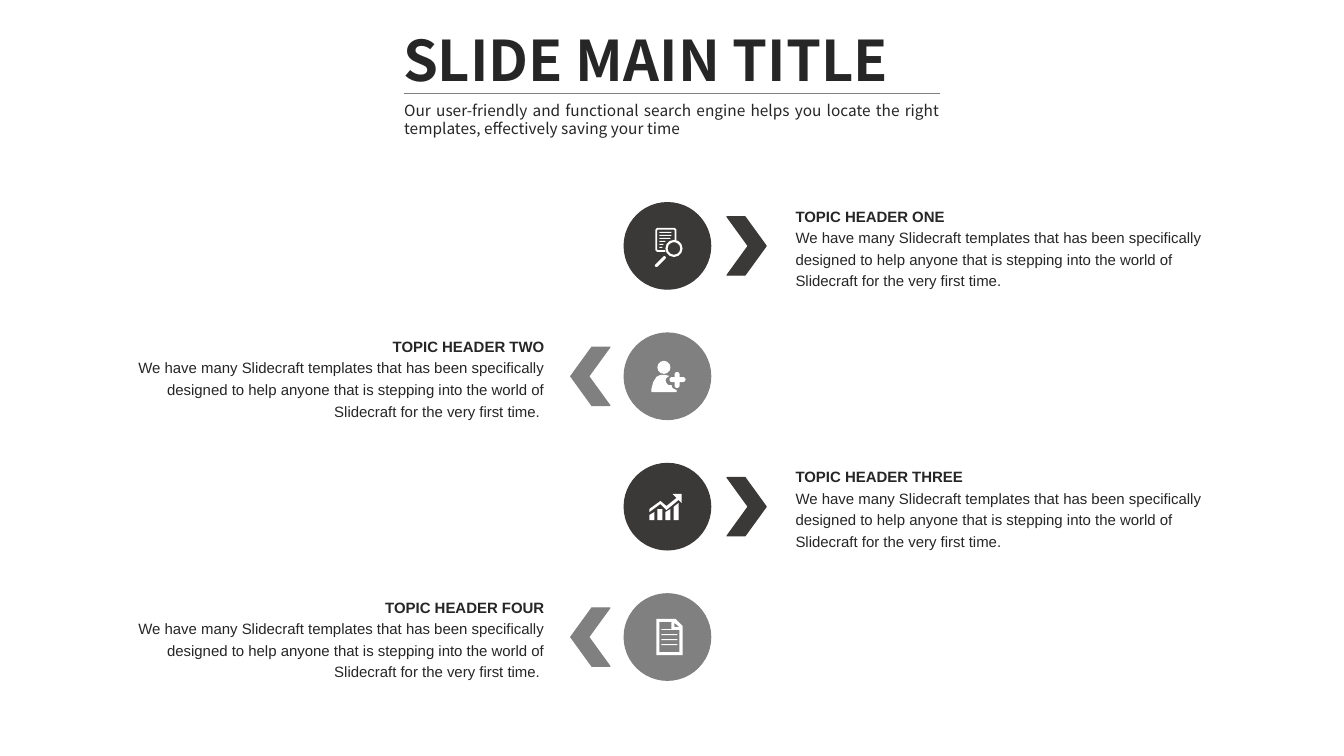
from pptx import Presentation
from pptx import util as u
from pptx.dml.color import RGBColor
from pptx.enum import shapes, text
from pptx.oxml import parse_xml
from pptx.oxml.ns import nsdecls

CHARCOAL = RGBColor(0x3B, 0x38, 0x38)
GRAY = RGBColor(0x80, 0x80, 0x80)
INK = RGBColor(0x26, 0x26, 0x26)
WHITE = RGBColor(0xFF, 0xFF, 0xFF)
SHAPE = shapes.MSO_SHAPE
FIRST_TOP, PITCH, DIAMETER = 2.01, 3.88 / 3, 0.86
BODY = ("We have many Slidecraft templates that has been specifically designed to help "
        "anyone that is stepping into the world of Slidecraft for the very first time.")
TOPICS = ["TOPIC HEADER ONE", "TOPIC HEADER TWO", "TOPIC HEADER THREE", "TOPIC HEADER FOUR"]


class TopicSlide:
    heading_font = "Noto Sans CJK SC"
    body_font = "Arial"

    def __init__(self, slide):
        self.shapes = slide.shapes

    def paint(self, item, fill, line=None, width=0.75):
        item.shadow.inherit = False
        if fill is None:
            item.fill.background()
        else:
            item.fill.solid()
            item.fill.fore_color.rgb = fill
        if line is None:
            item.line.fill.background()
        else:
            item.line.color.rgb = line
            item.line.width = u.Pt(width)
        return item

    def preset(self, kind, left, top, width, height, fill=WHITE, line=None):
        item = self.shapes.add_shape(
            kind, u.Inches(left), u.Inches(top), u.Inches(width), u.Inches(height))
        return self.paint(item, fill, line)

    def outline(self, contours, fill=WHITE, line=None, width=0.75, close=True):
        paths = [[(u.Inches(x), u.Inches(y)) for x, y in contour] for contour in contours]
        builder = self.shapes.build_freeform(*paths[0][0], scale=1.0)
        for index, points in enumerate(paths):
            if index:
                builder.move_to(*points[0])
            builder.add_line_segments(points[1:], close=close)
        return self.paint(builder.convert_to_shape(), fill, line, width)

    def rule(self, left, right, y, color):
        item = self.shapes.add_connector(
            shapes.MSO_CONNECTOR.STRAIGHT,
            u.Inches(left), u.Inches(y), u.Inches(right), u.Inches(y))
        item.line.color.rgb = color
        item.line.width = u.Pt(1)
        item._element.spPr.append(parse_xml(f"<a:effectLst {nsdecls('a')}/>"))

    def words(self, box, lines, font, size, align, spacing=None, inset=(0, 0)):
        frame = self.shapes.add_textbox(*[u.Inches(length) for length in box]).text_frame
        frame.word_wrap = True
        frame.auto_size = text.MSO_AUTO_SIZE.SHAPE_TO_FIT_TEXT
        frame.margin_left = frame.margin_right = u.Inches(inset[0])
        frame.margin_top = frame.margin_bottom = u.Inches(inset[1])
        for index, (wording, bold) in enumerate(lines):
            paragraph = frame.add_paragraph() if index else frame.paragraphs[0]
            paragraph.text = wording
            paragraph.alignment = align
            paragraph.line_spacing = spacing
            paragraph.font.name = font
            paragraph.font.size = u.Pt(size)
            paragraph.font.bold = bold
            paragraph.font.color.rgb = INK

    def heading(self, title, subtitle):
        for box, line, size in (((3.9, 0.2, 5.53, 0.78), (title, True), 40),
                                ((3.91, 0.95, 5.51, 0.47), (subtitle, False), 11)):
            self.words(box, [line], self.heading_font, size,
                       text.PP_ALIGN.JUSTIFY, inset=(0.1, 0.05))
        self.rule(4.01, 9.32, 0.93, GRAY)

    def topic(self, index, header):
        top = FIRST_TOP + index * PITCH
        on_right = index % 2 == 0
        color = CHARCOAL if on_right else GRAY
        self.preset(SHAPE.OVAL, 6.19, top, DIAMETER, DIAMETER, color, color)
        start, way = (7.21, 1) if on_right else (6.05, -1)
        chevron = [(0, 0), (0.21, 0.29), (0, 0.58), (0.18, 0.58), (0.39, 0.29), (0.18, 0)]
        self.outline([[(start + way * x, top + 0.14 + y) for x, y in chevron]], color, color)
        self.words((7.89 if on_right else 1.09, top + 0.01, 4.31, 0.86),
                   [(header, True), (BODY if on_right else BODY + " ", False)],
                   self.body_font, 10.7,
                   text.PP_ALIGN.LEFT if on_right else text.PP_ALIGN.RIGHT, spacing=1.2)

    def text_lines(self, left, top, gap, widths):
        for index, width in enumerate(widths):
            self.preset(SHAPE.RECTANGLE, left, top + index * gap, width, 0.01)

    def search_icon(self):
        self.outline([[(6.7, 2.39), (6.7, 2.28), (6.69, 2.27), (6.52, 2.27), (6.51, 2.28),
                       (6.51, 2.48), (6.52, 2.49), (6.6, 2.49)]],
                     fill=None, line=WHITE, width=1.25, close=False)
        self.text_lines(6.54, 2.3, 0.03, [0.12, 0.12, 0.11, 0.06, 0.04, 0.03])
        lens = self.preset(SHAPE.DONUT, 6.6, 2.38, 0.17, 0.17)
        lens.adjustments[0] = 0.13
        handle = self.preset(SHAPE.ROUNDED_RECTANGLE, 6.48, 2.58, 0.14, 0.03)
        handle.adjustments[0] = 0.5
        handle.rotation = -45

    def add_person_icon(self):
        self.preset(SHAPE.OVAL, 6.52, 3.58, 0.13, 0.13)
        self.outline([[(6.46, 3.89), (6.46, 3.86), (6.48, 3.79), (6.51, 3.74), (6.55, 3.72),
                       (6.6, 3.72), (6.64, 3.73), (6.61, 3.75), (6.6, 3.77), (6.61, 3.8),
                       (6.63, 3.82), (6.66, 3.82), (6.67, 3.85), (6.71, 3.87), (6.71, 3.89)]])
        for bar in ((6.64, 3.74, 0.16, 0.05), (6.69, 3.69, 0.05, 0.16)):
            self.preset(SHAPE.ROUNDED_RECTANGLE, *bar).adjustments[0] = 0.5

    def growth_icon(self):
        bars = [(6.44, 5.11, 5.08), (6.52, 5.05, 5.05), (6.6, 5.08, 5.05), (6.68, 5.03, 4.99)]
        self.outline([[(x, 5.16), (x, left_top), (x + 0.05, right_top), (x + 0.05, 5.16)]
                      for x, left_top, right_top in bars])
        self.outline([[(6.76, 4.9), (6.67, 4.9), (6.71, 4.94), (6.61, 5.02), (6.55, 4.97),
                       (6.44, 5.05), (6.44, 5.08), (6.55, 5), (6.61, 5.06), (6.73, 4.96),
                       (6.76, 4.99)]])

    def document_icon(self):
        self.outline([
            [(6.77, 6.21), (6.7, 6.14), (6.51, 6.14), (6.51, 6.5), (6.77, 6.5)],
            [(6.74, 6.22), (6.69, 6.22), (6.69, 6.18)],
            [(6.74, 6.47), (6.54, 6.47), (6.54, 6.17), (6.66, 6.17), (6.66, 6.25), (6.74, 6.25)],
        ])
        self.text_lines(6.56, 6.24, 0.05, [0.16] * 4)


def main():
    deck = Presentation()
    deck.slide_width, deck.slide_height = u.Inches(13.33), u.Inches(7.5)
    page = TopicSlide(deck.slides.add_slide(deck.slide_layouts[6]))
    page.heading("SLIDE MAIN TITLE",
                 "Our user-friendly and functional search engine helps you locate the right "
                 "templates, effectively saving your time")
    for index, header in enumerate(TOPICS):
        page.topic(index, header)
    page.search_icon()
    page.add_person_icon()
    page.growth_icon()
    page.document_icon()
    deck.save("out.pptx")


if __name__ == "__main__":
    main()
